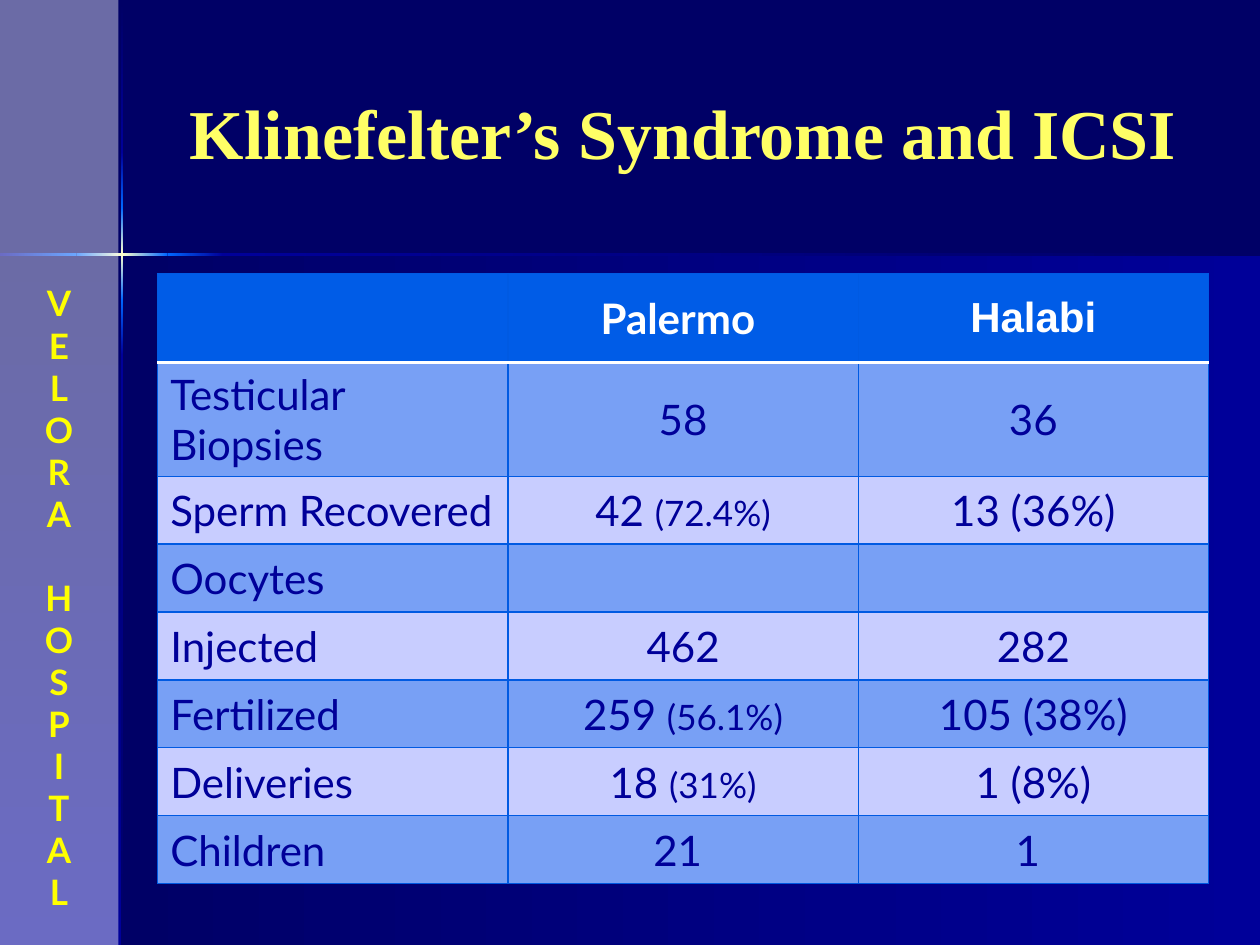
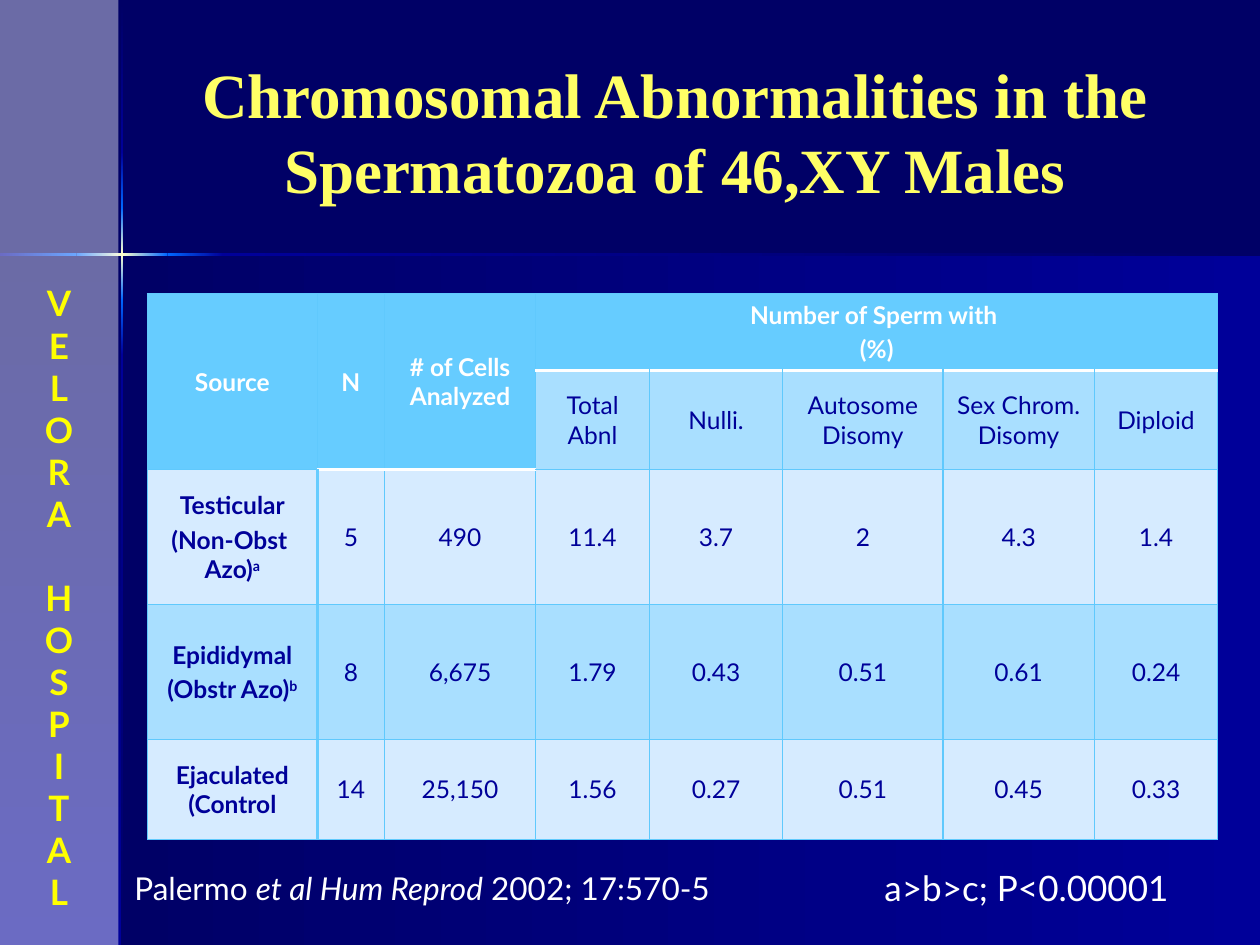
from itertools import pairwise

from pptx import Presentation
from pptx import util as u
from pptx.dml.color import RGBColor
from pptx.enum import shapes, text
from pptx.oxml import parse_xml
from pptx.oxml.ns import nsdecls, qn

# Shared look
COLOURS = {
    "night": "000066", "navy": "000099", "azure": "0066FF", "glow": "FFFFCC",
    "white": "FFFFFF", "title": "FFFF66", "name": "FFFF00",
}
SERIF, SANS, ARIAL = "Times New Roman", "Lato", "Arial"
SIDE_NAME = ("VELORA", "HOSPITAL")
WIDTH, HEIGHT = 25.4, 19.05
CORNER = (2.46, 5.13)
STRIP_WIDTH = 2.39

# Glowing cross: edges of the segments, and the colours of each segment
RAMP = [("night", "navy"), ("navy", "azure"), ("azure", "glow", "azure"),
        ("azure", "navy"), ("navy", "night")]
UPRIGHT_EDGES = [0.03, 3.07, 4.19, 6.05, 7.16, HEIGHT]
LEVEL_EDGES = [0, 1.54, 3.38, 4.5, WIDTH]
BEAM, BEAM_X, BEAM_Y = 0.05, 2.44, 5.11

# Content: a cell is a list of paragraphs, a paragraph a list of spans
SMALL = {"size": 20}
SUPER = {"baseline": 30}
ICSI = {
    "title": "Klinefelter’s Syndrome and ICSI",
    "title_size": 40,
    "title_at": (2.34, 1.7, 22.86, 1.9),
    "table_at": (3.18, 5.51),
    "columns": [7.06] * 3,
    "rows": [1.8, 2.28] + [1.37] * 6,
    "size": 24,
    "colours": {"head": "005CE7", "band": "78A0F5", "plain": "C8CDFF",
                "grid": "005AE2", "divider": "005CE7"},
    "head_depth": [1, 1, 1],
    "rule_columns": [0, 1, 2],
    "merges": [],
    "row_labels": False,
    "cells": [
        ["", "Palermo ", [[("Halabi", {"font": ARIAL})]]],
        ["Testicular Biopsies", "58", "36"],
        ["Sperm Recovered", [["42 ", ("(72.4%)", SMALL)]], "13 (36%)"],
        ["Oocytes", "", ""],
        ["Injected", "462", "282"],
        ["Fertilized", [["259 ", ("(56.1%)", SMALL)]], "105 (38%)"],
        ["Deliveries", [["18 ", ("(31%)", SMALL)]], "1 (8%)"],
        ["Children", "21 ", "1 "],
    ],
    "notes": [],
}
SPERM = {
    "title": "Chromosomal Abnormalities in the Spermatozoa of 46,XY Males",
    "title_size": 36,
    "title_at": (2.9, 0.64, 21.41, 3.99),
    "table_at": (2.97, 5.92),
    "columns": [3.43, 1.35, 3.05, 2.29, 2.69, 3.23, 3.05, 2.49],
    "rows": [1.52, 2.01, 2.72, 2.72, 2.01],
    "size": 14,
    "colours": {"head": "66CCFF", "band": "A9DFFF", "plain": "D6EBFF",
                "grid": "60C9FD", "divider": "66CCFF"},
    "head_depth": [2, 2, 2, 1, 1, 1, 1, 1],
    "rule_columns": range(1, 8),
    "merges": [(0, 0, 1, 0), (0, 1, 1, 1), (0, 2, 1, 2), (0, 3, 0, 7)],
    "row_labels": True,
    "cells": [
        ["Source", "N", "# of Cells Analyzed",
         [["Number of Sperm with "], ["(%)"]], "", "", "", ""],
        ["", "", "", "Total Abnl", "Nulli.", "Autosome Disomy",
         "Sex Chrom.\nDisomy", "Diploid"],
        [[["Testicular"], ["(Non-Obst \nAzo)", ("a", SUPER)]],
         "5", "490", "11.4", "3.7", "2", "4.3", "1.4"],
        [[["Epididymal"], ["(Obstr Azo)", ("b", SUPER)]],
         "8", "6,675", "1.79", "0.43", "0.51", "0.61", "0.24"],
        ["Ejaculated\n(Control", "14", "25,150", "1.56", "0.27", "0.51", "0.45", "0.33"],
    ],
    "notes": [
        ((2.46, 17.4, 12.57, 1.02), 18,
         [["Palermo ", ("et al Hum Reprod", {"italic": True}), " 2002; 17:570-5"]]),
        ((17.58, 17.35, 6.58, 1.12), 20, "a>b>c; P<0.00001"),
    ],
}


def rgb(colour):
    return RGBColor.from_string(COLOURS.get(colour, colour))


def format_span(span, size, colour, font=SANS, bold=False, italic=False, baseline=0):
    span.font.name, span.font.size = font, u.Pt(size)
    span.font.bold, span.font.italic = bold, italic
    span.font.color.rgb = rgb(colour)
    if baseline:
        span._r.get_or_add_rPr().set("baseline", str(baseline * 1000))


def write(frame, content, align="LEFT", gaps=None, **style):
    """Fill a text frame; gaps maps a paragraph number to the points before it."""
    paragraphs = [[content]] if isinstance(content, str) else content
    for number, spans in enumerate(paragraphs):
        para = frame.paragraphs[0] if number == 0 else frame.add_paragraph()
        para.alignment = text.PP_ALIGN[align]
        if gaps and number in gaps:
            para.space_before = u.Pt(gaps[number])
        for item in spans:
            words, extra = (item, {}) if isinstance(item, str) else item
            for line_number, line in enumerate(words.split("\n")):
                if line_number:
                    para.add_line_break()
                if line:
                    span = para.add_run()
                    span.text = line
                    format_span(span, **{**style, **extra})


def add_text(page, at, content, anchor="TOP", **style):
    box = page.shapes.add_textbox(*map(u.Cm, at))
    box.text_frame.word_wrap = True
    box.text_frame.vertical_anchor = text.MSO_ANCHOR[anchor]
    write(box.text_frame, content, **style)


def add_panel(page, at, colours, angle=0, opacity=None):
    """Rectangle with one plain colour or an even gradient."""
    panel = page.shapes.add_shape(shapes.MSO_SHAPE.RECTANGLE, *map(u.Cm, at))
    panel.shadow.inherit = False
    panel.line.fill.background()
    properties = panel._element.spPr
    if len(colours) == 1:
        panel.fill.solid()
        panel.fill.fore_color.rgb = rgb(colours[0])
        colour = properties.find(qn("a:solidFill"))[0]
        colour.append(parse_xml(f'<a:alpha {nsdecls("a")} val="{opacity * 1000}"/>'))
        return
    step = 100000 // (len(colours) - 1)
    stops = "".join(f'<a:gs pos="{i * step}"><a:srgbClr val="{rgb(c)}"/></a:gs>'
                    for i, c in enumerate(colours))
    properties.find(qn("a:prstGeom")).addnext(parse_xml(
        f'<a:gradFill {nsdecls("a")} rotWithShape="1"><a:gsLst>{stops}</a:gsLst>'
        f'<a:lin ang="{angle * 60000}" scaled="0"/></a:gradFill>'))


def add_backdrop(page):
    page.background.fill.solid()
    page.background.fill.fore_color.rgb = rgb("night")
    left, top = CORNER
    # Lower panels
    add_panel(page, (left, top, WIDTH - left, HEIGHT - top), ("night", "navy"))
    add_panel(page, (0, top, left, HEIGHT - top), ("night", "navy"), angle=90)
    # Glowing cross
    for (start, end), colours in zip(pairwise(UPRIGHT_EDGES), RAMP):
        add_panel(page, (BEAM_X, start, BEAM, end - start), colours, angle=90)
    for (start, end), colours in zip(pairwise(LEVEL_EDGES), RAMP[1:]):
        add_panel(page, (start, BEAM_Y, end - start, BEAM), colours)
    # Side strip with the name set downwards
    add_panel(page, (0, 0, STRIP_WIDTH, HEIGHT), ("white",), opacity=42)
    letters = [[letter] for letter in "".join(SIDE_NAME)]
    add_text(page, (0.2, 5.56, 1.98, 13.08), letters, align="CENTER",
             gaps={len(SIDE_NAME[0]): 24}, size=20, colour="name", bold=True)


def set_borders(cell, borders):
    properties = cell._tc.get_or_add_tcPr()
    for place, (side, (colour, points)) in enumerate(borders.items()):
        properties.insert(place, parse_xml(
            f'<a:ln{side} {nsdecls("a")} w="{int(u.Pt(points))}"><a:solidFill>'
            f'<a:srgbClr val="{rgb(colour)}"/></a:solidFill></a:ln{side}>'))


def add_data_table(page, topic):
    columns, rows, colours = topic["columns"], topic["rows"], topic["colours"]
    left, top = topic["table_at"]
    table = page.shapes.add_table(len(rows), len(columns), u.Cm(left), u.Cm(top),
                                  u.Cm(sum(columns)), u.Cm(sum(rows))).table
    table.first_row = table.horz_banding = False
    for column, width in zip(table.columns, columns):
        column.width = u.Cm(width)
    for row, height in zip(table.rows, rows):
        row.height = u.Cm(height)
    for merge in topic["merges"]:
        table.cell(*merge[:2]).merge(table.cell(*merge[2:]))

    grid, rule = (colours["grid"], 0.75), ("white", 2)
    divider = (colours["divider"], 2)
    for r, values in enumerate(topic["cells"]):
        for c, value in enumerate(values):
            cell = table.cell(r, c)
            depth = topic["head_depth"][c]
            head = r < depth
            label = c == 0 and not head
            ruled = c in topic["rule_columns"]
            cell.vertical_anchor = text.MSO_ANCHOR.MIDDLE
            cell.fill.solid()
            cell.fill.fore_color.rgb = rgb(
                colours["head" if head else "band" if r % 2 else "plain"])
            labelled = topic["row_labels"]
            set_borders(cell, {
                "L": divider if labelled and c == 1 and not head else grid,
                "R": divider if labelled and label else grid,
                "T": rule if ruled and r == depth else grid,
                "B": rule if ruled and r == depth - 1 else grid,
            })
            if value:
                write(cell.text_frame, value,
                      align="LEFT" if label and not labelled else "CENTER",
                      gaps={1: topic["size"] * 0.2}, size=topic["size"],
                      colour="white" if head else "navy",
                      bold=head or (label and labelled))


def main():
    deck = Presentation()
    deck.slide_width, deck.slide_height = u.Cm(WIDTH), u.Cm(HEIGHT)
    for topic in (ICSI, SPERM):
        page = deck.slides.add_slide(deck.slide_layouts[6])
        add_backdrop(page)
        add_text(page, topic["title_at"], topic["title"], anchor="MIDDLE", align="CENTER",
                 size=topic["title_size"], colour="title", font=SERIF, bold=True)
        add_data_table(page, topic)
        for at, size, content in topic["notes"]:
            add_text(page, at, content, size=size, colour="white")
    deck.save("out.pptx")


if __name__ == "__main__":
    main()
